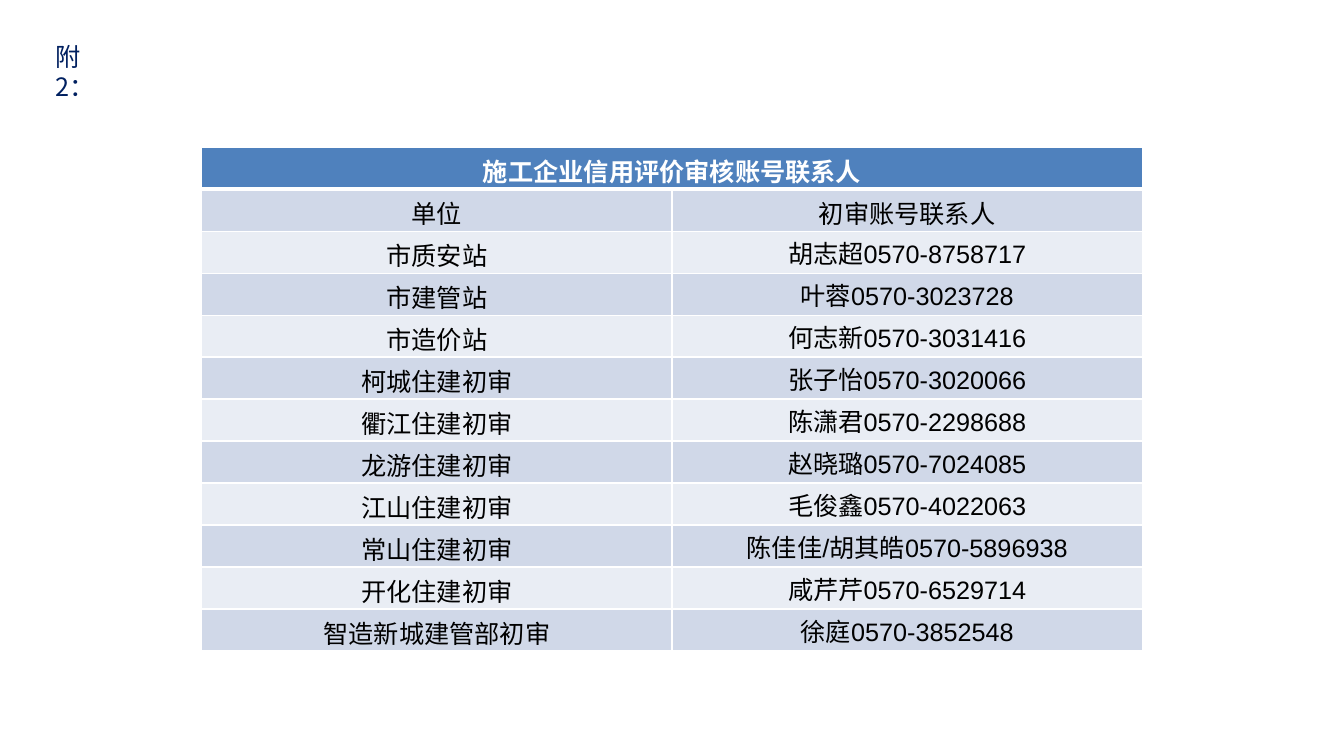
from dataclasses import dataclass

from lxml import etree
from pptx import Presentation
from pptx.dml.color import RGBColor
from pptx.enum import text
from pptx.oxml import ns
from pptx import util as u


@dataclass(frozen=True)
class Theme:
    latin: str = "Arial"
    chinese: str = "Noto Sans CJK SC"
    size: int = 18
    navy: str = "002060"
    header: str = "4F81BD"
    bands: tuple = ("D0D8E8", "E9EDF4")
    white: str = "FFFFFF"
    black: str = "000000"
    rule: float = 1
    header_rule: float = 3


TITLE = "施工企业信用评价审核账号联系人"
CONTACTS = [
    ("单位", "初审账号联系人"),
    ("市质安站", "胡志超0570-8758717"),
    ("市建管站", "叶蓉0570-3023728"),
    ("市造价站", "何志新0570-3031416"),
    ("柯城住建初审", "张子怡0570-3020066"),
    ("衢江住建初审", "陈潇君0570-2298688"),
    ("龙游住建初审", "赵晓璐0570-7024085"),
    ("江山住建初审", "毛俊鑫0570-4022063"),
    ("常山住建初审", "陈佳佳/胡其皓0570-5896938"),
    ("开化住建初审", "咸芹芹0570-6529714"),
    ("智造新城建管部初审", "徐庭0570-3852548"),
]


def write(frame, words, *, latin, chinese, size, color, bold=False, align=None):
    """Write one formatted paragraph into a text frame."""
    para = frame.paragraphs[0]
    para.alignment = align
    span = para.add_run()
    span.text = words
    span.font.name = latin
    span.font.size = u.Pt(size)
    span.font.bold = bold
    span.font.color.rgb = RGBColor.from_string(color)
    east = etree.SubElement(span.font._element, ns.qn("a:ea"))
    east.set("typeface", chinese)


class PageBuilder:
    """Hold the theme and the current page, and add elements to it."""

    def __init__(self, page, theme):
        self.page = page
        self.theme = theme

    def label(self, words, left, top, width, height):
        """Add a wrapped text box."""
        box = self.page.shapes.add_textbox(*map(u.Inches, (left, top, width, height)))
        box.text_frame.word_wrap = True
        box.text_frame.auto_size = text.MSO_AUTO_SIZE.SHAPE_TO_FIT_TEXT
        write(box.text_frame, words, latin=self.theme.chinese, chinese=self.theme.chinese,
              size=self.theme.size, color=self.theme.navy)

    def borders(self, cell, top, bottom):
        """Draw white rules on the four sides of a cell."""
        properties = cell._tc.get_or_add_tcPr()
        widths = {"lnL": self.theme.rule, "lnR": self.theme.rule, "lnT": top, "lnB": bottom}
        for index, (side, width) in enumerate(widths.items()):
            line = etree.Element(ns.qn(f"a:{side}"), w=str(u.Pt(width)))
            fill = etree.SubElement(line, ns.qn("a:solidFill"))
            etree.SubElement(fill, ns.qn("a:srgbClr"), val=self.theme.white)
            properties.insert(index, line)

    def cell(self, cell, words, fill, color, *, bold=False, tight=False,
             top=None, bottom=None):
        """Fill, rule and write one table cell."""
        cell.fill.solid()
        cell.fill.fore_color.rgb = RGBColor.from_string(fill)
        cell.vertical_anchor = text.MSO_ANCHOR.MIDDLE
        if tight:
            cell.margin_left = cell.margin_right = u.Inches(0.07)
            cell.margin_top = cell.margin_bottom = 0
        self.borders(cell, top or self.theme.rule, bottom or self.theme.rule)
        write(cell.text_frame, words, latin=self.theme.latin, chinese=self.theme.chinese,
              size=self.theme.size, color=color, bold=bold, align=text.PP_ALIGN.CENTER)

    def contact_table(self, title, contacts, left, top, width, height):
        """Add a banded table under one merged title row."""
        theme = self.theme
        table = self.page.shapes.add_table(
            len(contacts) + 1, 2, *map(u.Inches, (left, top, width, height))).table
        table.cell(0, 0).merge(table.cell(0, 1))
        self.cell(table.cell(0, 0), title, theme.header, theme.white, bold=True,
                  bottom=theme.header_rule)
        self.borders(table.cell(0, 1), theme.rule, theme.header_rule)
        for row, contact in enumerate(contacts):
            for column, words in enumerate(contact):
                self.cell(table.cell(row + 1, column), words, theme.bands[row % 2],
                          theme.black, tight=row > 0 and column == 1,
                          top=theme.header_rule if row == 0 else None)


def main():
    """Build the contact page and save the deck."""
    deck = Presentation()
    deck.slide_width, deck.slide_height = u.Inches(13.33), u.Inches(7.5)
    builder = PageBuilder(deck.slides.add_slide(deck.slide_layouts[6]), Theme())
    builder.label("附2：", 0.45, 0.36, 0.81, 0.4)
    builder.contact_table(TITLE, CONTACTS, 2, 1.46, 9.33, 5)
    deck.save("out.pptx")


if __name__ == "__main__":
    main()
